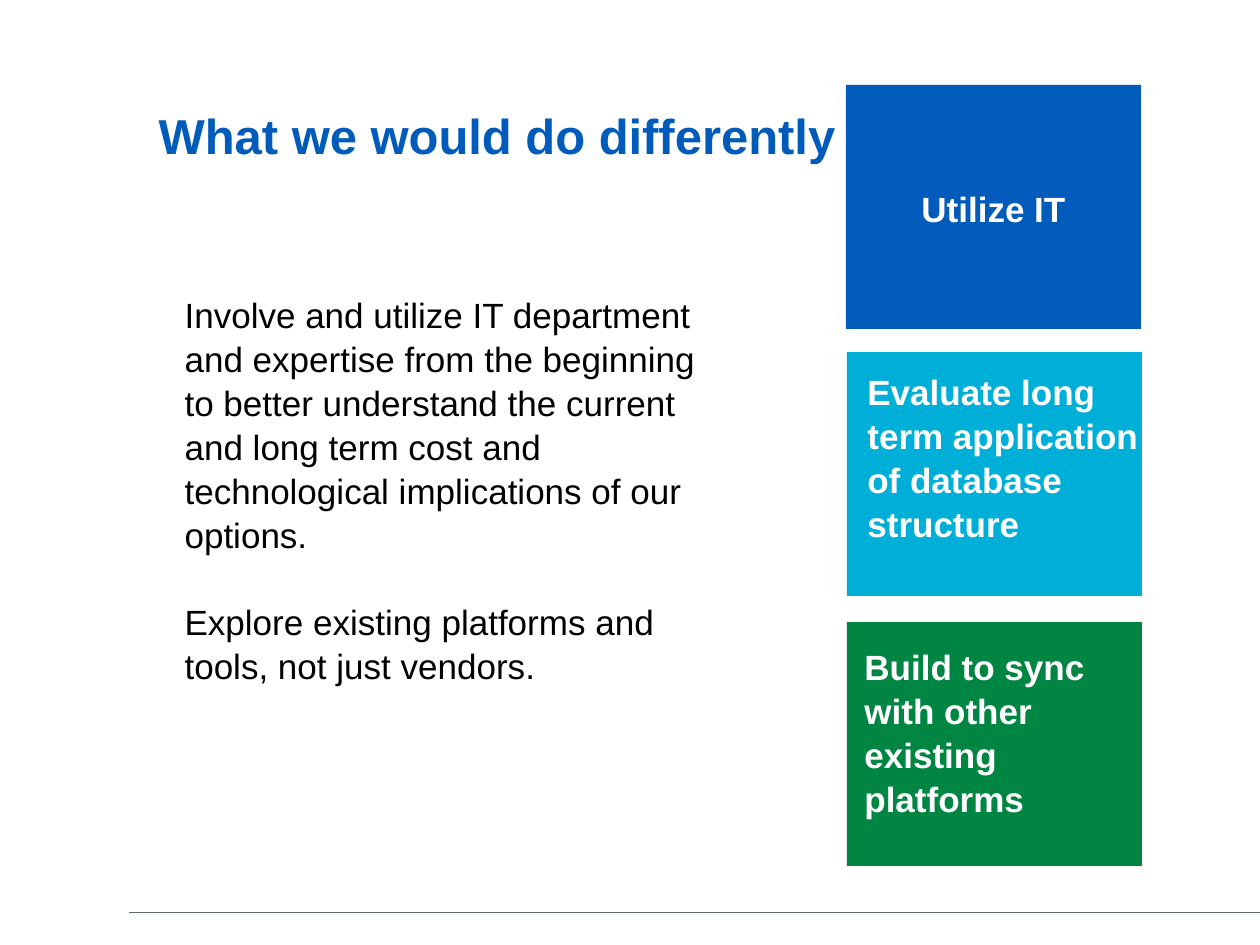
from pptx import Presentation
from pptx.dml.color import RGBColor
from pptx.enum.shapes import MSO_CONNECTOR, MSO_SHAPE
from pptx.enum.text import MSO_ANCHOR, MSO_AUTO_SIZE, PP_ALIGN
from pptx.util import Pt
from lxml.etree import SubElement
from pptx.oxml.ns import qn

SCALE = 914400 / 126  # EMU in one px
HUES = {"blue": "005BBB", "cyan": "00AFD8", "green": "008542",
        "white": "FFFFFF", "black": "000000", "rule": "5E6A71"}
CARD_W, CARD_H = 295, 244


def px(*nums):
    return [round(n * SCALE) for n in nums]


def hue(name):
    return RGBColor.from_string(HUES[name])


def style(para, size, color, bold=False, align=PP_ALIGN.LEFT):
    para.alignment = align
    para.line_spacing = 1.05
    para.space_before = Pt(0)
    font = para.font
    font.name, font.size, font.bold = "Arial", Pt(size), bold
    font.color.rgb = hue(color)


def place(shape, box):
    shape.left, shape.top, shape.width, shape.height = px(*box)
    frame = shape.text_frame
    frame.word_wrap = True
    frame.auto_size = MSO_AUTO_SIZE.NONE
    return frame


def add_title(slide, box, text):
    frame = place(slide.shapes.title, box)
    frame.vertical_anchor = MSO_ANCHOR.MIDDLE
    frame.text = text
    style(frame.paragraphs[0], 28, "blue", True)


def add_body(slide, box, lines):
    frame = place(slide.placeholders[1], box)
    frame.text = "\n".join(lines)
    for i, para in enumerate(frame.paragraphs):
        props = para._p.get_or_add_pPr()
        props.set("marL", "0")
        props.set("indent", "0")
        SubElement(props, qn("a:buNone"))
        style(para, 20, "black")
        if i:
            para.space_before = Pt(24)


def add_card(shapes, x, y, fill):
    card = shapes.add_shape(MSO_SHAPE.RECTANGLE, *px(x, y, CARD_W, CARD_H))
    card.shadow.inherit = False
    card.fill.solid()
    card.fill.fore_color.rgb = hue(fill)
    card.line.fill.background()
    return card


def add_plain(slide, x, y, fill, text):
    frame = add_card(slide.shapes, x, y, fill).text_frame
    frame.vertical_anchor = MSO_ANCHOR.MIDDLE
    frame.text = text
    style(frame.paragraphs[0], 20, "white", True, PP_ALIGN.CENTER)


def add_group(slide, x, y, fill, text, inner):
    """Card with a label; inner is the label's box within the card."""
    shapes = slide.shapes.add_group_shape().shapes
    add_card(shapes, x, y, fill)
    dx, dy, w, h = inner
    box = (x + dx, y + dy, w, h)
    frame = place(shapes.add_textbox(*px(*box)), box)
    frame.text = text
    style(frame.paragraphs[0], 20, "white", True)


def add_rule(slide, x, y, end):
    rule = slide.shapes.add_connector(MSO_CONNECTOR.STRAIGHT, *px(x, y, end, y))
    rule.line.color.rgb = hue("rule")
    rule.line.width = Pt(0.5)
    SubElement(rule._element.spPr, qn("a:effectLst"))


def main():
    deck = Presentation()
    deck.slide_width, deck.slide_height = px(1260, 945)
    slide = deck.slides.add_slide(deck.slide_layouts[1])

    # Footer rule
    add_rule(slide, 129, 912, 1260)

    # Title and body
    add_title(slide, (146, 103, 1024, 60), "What we would do differently")
    add_body(slide, (172, 285, 547, 582), [
        "Involve and utilize IT department and expertise from the beginning "
        "to better understand the current and long term cost and "
        "technological implications of our options.",
        "Explore existing platforms and tools, not just vendors."])

    # Column of cards
    add_plain(slide, 846, 85, "blue", "Utilize IT")
    add_group(slide, 847, 352, "cyan",
              "Evaluate long term application of database structure",
              (8, 10, 300, 179))
    add_group(slide, 847, 622, "green",
              "Build to sync with other existing platforms",
              (5, 15, 256, 200))

    deck.save("out.pptx")


if __name__ == "__main__":
    main()
